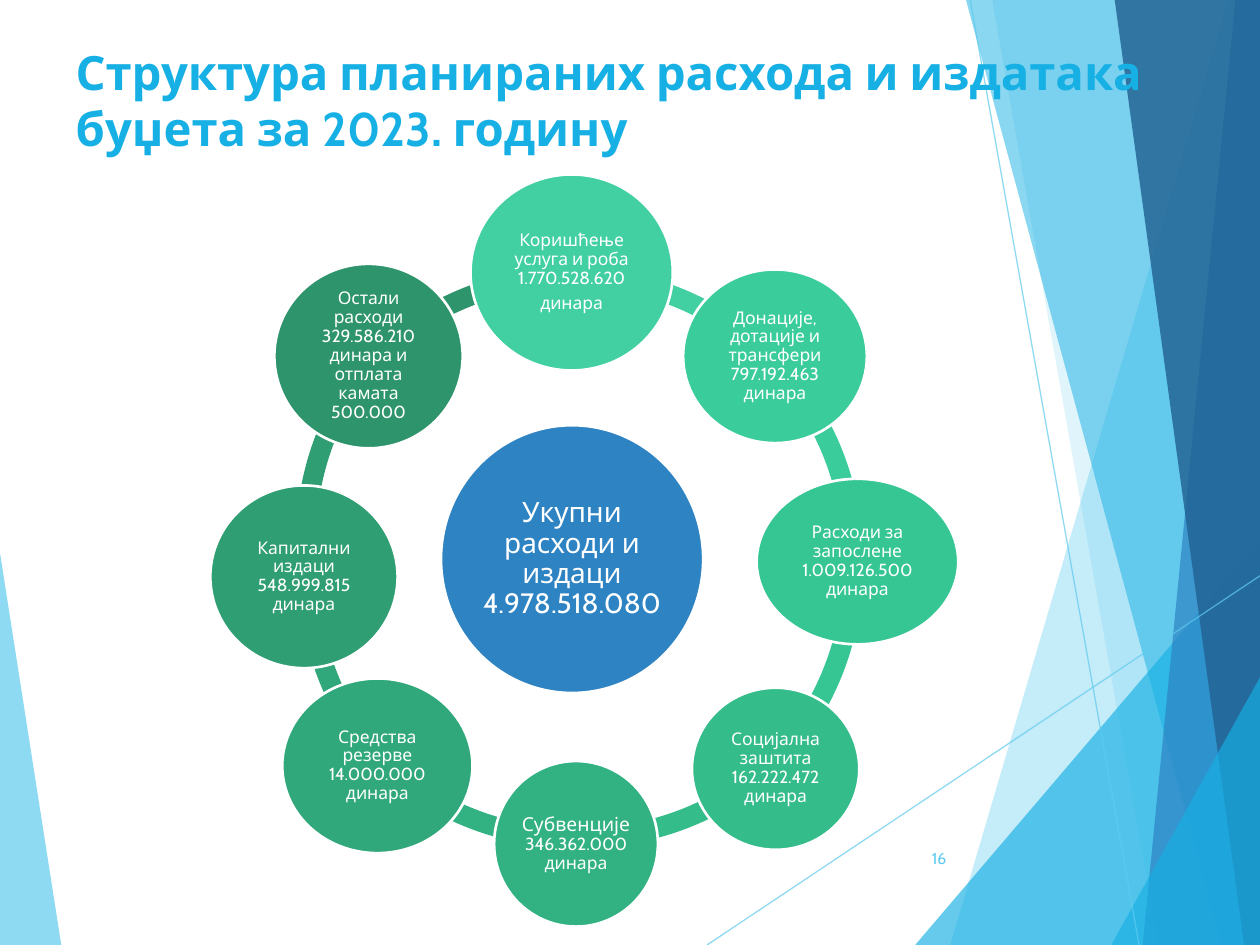
from lxml.etree import SubElement
from pptx import Presentation
from pptx.dml.color import RGBColor
from pptx.enum.shapes import MSO_CONNECTOR, MSO_SHAPE
from pptx.enum.text import MSO_ANCHOR, PP_ALIGN
from pptx.oxml.ns import qn
from pptx.util import Pt

COLORS = {
    "sky": "5FCBEF", "cyan": "17B0E4", "blue": "2E83C3", "navy": "226292", "white": "FFFFFF",
    "goods": "42D0A2", "donations": "3ACC9B", "staff": "35C694", "social": "34BC8B",
    "subsidies": "32B283", "reserves": "31A87B", "capital": "309E73", "other": "2E946B",
}


def write_text(paragraph, text, size=10, color="white", bold=False, align=PP_ALIGN.CENTER,
               line_spacing=0.9, space_after=0):
    paragraph.alignment = align
    paragraph.line_spacing = line_spacing
    paragraph.space_before = Pt(0)
    paragraph.space_after = Pt(space_after)
    run = paragraph.add_run()
    run.text = text
    run.font.name = "Cabin"
    run.font.size = Pt(size)
    run.font.bold = bold
    run.font.color.rgb = RGBColor.from_string(COLORS[color])


def paint(fill, color, opacity=100):
    fill.solid()
    fill.fore_color.rgb = RGBColor.from_string(COLORS[color])
    if opacity < 100:
        for color_element in fill._xPr.iter(qn("a:srgbClr")):
            SubElement(color_element, qn("a:alpha"), val=str(opacity * 1000))


presentation = Presentation()
presentation.slide_width = Pt(720)
presentation.slide_height = Pt(540)
slide = presentation.slides.add_slide(presentation.slide_layouts[5])
shapes = slide.shapes

facets = [
    ("sky", 70, [(0, 316), (35.3, 540), (0, 540)]),
    ("sky", 36, [(702, 0), (543, 540), (720, 540), (720, 0)]),
    ("sky", 20, [(567.4, 0), (661.7, 540), (720, 540), (720, 0)]),
    ("cyan", 66, [(522.7, 540), (720, 309), (720, 540)]),
    ("cyan", 50, [(552.2, 0), (698.4, 540), (720, 540), (720, 0)]),
    ("blue", 70, [(706.3, 0), (653, 540), (720, 540), (720, 0)]),
    ("navy", 82, [(637.2, 0), (711.4, 540), (720, 540), (720, 0)]),
    ("cyan", 66, [(635, 540), (720, 387), (720, 540)]),
]
for color, opacity, points in facets:
    builder = shapes.build_freeform(*points[0], scale=Pt(1))
    builder.add_line_segments(points[1:], close=True)
    facet = builder.convert_to_shape()
    facet.shadow.inherit = False
    facet.line.fill.background()
    paint(facet.fill, color, opacity)

for start_x, start_y, end_x, end_y in [(404, 540, 720, 329), (554.4, 0, 650.9, 540)]:
    line = shapes.add_connector(
        MSO_CONNECTOR.STRAIGHT, Pt(start_x), Pt(start_y), Pt(end_x), Pt(end_y))
    line.line.width = Pt(0.75)
    paint(line.line.fill, "sky", 70)
    SubElement(line._element.spPr, qn("a:effectLst"))

title = shapes.title
title.left, title.top, title.width, title.height = Pt(36), Pt(20.9), Pt(648), Pt(67)
title.text_frame.word_wrap = True
title.text_frame.vertical_anchor = MSO_ANCHOR.TOP
write_text(title.text_frame.paragraphs[0],
           "Структура планираних расхода и издатака буџета за 2023. годину",
           size=27, color="cyan", bold=True, align=PP_ALIGN.LEFT, line_spacing=1.0)
title.element.getparent().append(title.element)

ring_arcs = [
    ("other", 159.8, 152.6, 135, 162),
    ("capital", 169.2, 141.8, 103.7, 131.93),
    ("reserves", 170.6, 160.6, 82.83, 107.62),
    ("subsidies", 161.3, 150.5, 53.83, 79.98),
    ("social", 165.6, 150.5, 28.54, 54.69),
    ("staff", 159.1, 157, 215.29, 26.63),
    ("donations", 159.1, 151.9, 189.24, 0.41),
    ("goods", 159.8, 152.6, 162, 189),
]
for color, left, top, start, end in ring_arcs:
    arc = shapes.add_shape(MSO_SHAPE.BLOCK_ARC, Pt(left), Pt(top), Pt(334), Pt(334))
    for index, value in enumerate((start, end, 0.034)):
        arc.adjustments[index] = value
    arc.shadow.inherit = False
    arc.line.fill.background()
    paint(arc.fill, color)

circles = [
    ("blue", 252, 243, 149.8, 153, [[("Укупни расходи и издаци 4.978.518.080", 16)]]),
    ("goods", 268.9, 99.7, 115.6, 112,
     [[("Коришћење услуга и роба 1.770.528.620", 10)], [("динара", 10)]]),
    ("donations", 390.4, 154, 105, 99.2,
     [[("Донације, дотације и трансфери 797.192.463 динара", 10)]]),
    ("staff", 432.4, 273.6, 115.2, 94.6, [[("Расходи за запослене 1.009.126.500 динара", 10)]]),
    ("social", 395.4, 393, 95.6, 92.6, [[("Социјална заштита 162.222.472 динара", 10)]]),
    ("subsidies", 282.4, 434.9, 93.6, 94.6,
     [[("Субвенције ", 11), ("346.362.000 динара", 10)]]),
    ("reserves", 161.3, 387.7, 108.7, 99.8, [[("Средства резерве 14.000.000 динара", 10)]]),
    ("capital", 120.2, 277.4, 107, 104.4, [[("Капитални издаци 548.999.815 динара", 10)]]),
    ("other", 156.8, 150.8, 107.6, 105.4,
     [[("Остали расходи 329.586.210 динара и отплата камата 500.000", 10)]]),
]
for color, left, top, width, height, paragraphs in circles:
    circle = shapes.add_shape(MSO_SHAPE.OVAL, Pt(left), Pt(top), Pt(width), Pt(height))
    circle.shadow.inherit = False
    paint(circle.fill, color)
    paint(circle.line.fill, "white")
    circle.line.width = Pt(1.5)
    frame = circle.text_frame
    frame.word_wrap = True
    frame.vertical_anchor = MSO_ANCHOR.MIDDLE
    frame.margin_left = frame.margin_right = frame.margin_top = frame.margin_bottom = Pt(1)
    for index, runs in enumerate(paragraphs):
        paragraph = frame.add_paragraph() if index else frame.paragraphs[0]
        for text, size in runs:
            write_text(paragraph, text, size=size, space_after=size * 0.35)

number_box = shapes.add_textbox(Pt(507.6), Pt(476), Pt(40.3), Pt(28.8))
number_box.text_frame.word_wrap = True
number_box.text_frame.vertical_anchor = MSO_ANCHOR.MIDDLE
write_text(number_box.text_frame.paragraphs[0], "16", size=9, color="sky",
           align=PP_ALIGN.RIGHT, line_spacing=1.0)

presentation.save("out.pptx")
